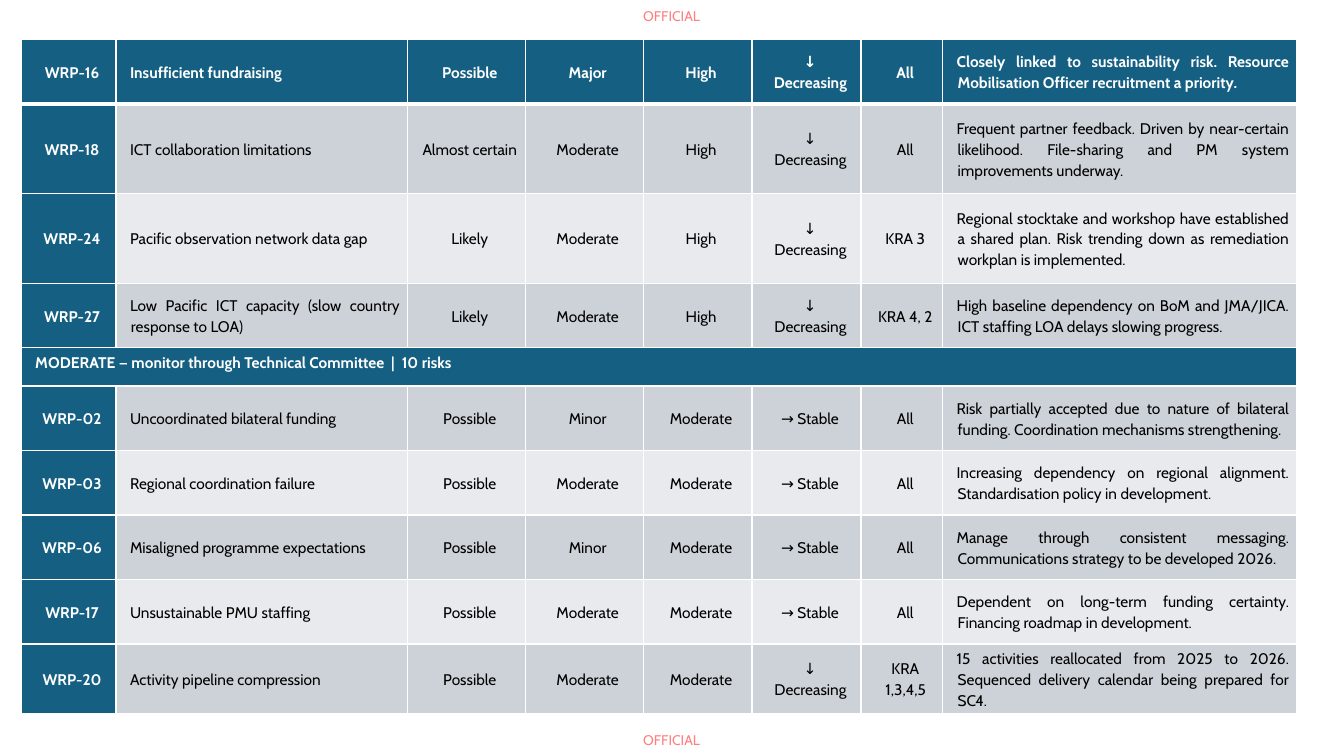
"""Build the risk register table slide."""
from dataclasses import dataclass

from lxml import etree
from pptx import Presentation
from pptx.dml.color import RGBColor
from pptx.enum.text import MSO_ANCHOR, MSO_AUTO_SIZE, PP_ALIGN
from pptx.oxml.ns import qn
from pptx.slide import Slide
from pptx.table import _Cell
from pptx.util import Inches, Pt

CENTER, JUSTIFY = PP_ALIGN.CENTER, PP_ALIGN.JUSTIFY
MIDDLE, TOP = MSO_ANCHOR.MIDDLE, MSO_ANCHOR.TOP
FIT_SHAPE = MSO_AUTO_SIZE.SHAPE_TO_FIT_TEXT


@dataclass(frozen=True)
class Theme:
    """Colours, font and type sizes of the slide."""
    font: str = "Cabin"
    body_size: float = 11
    marking_size: float = 10
    teal: str = "156082"
    dark_band: str = "CCD2D8"
    light_band: str = "E8EAED"
    white: str = "FFFFFF"
    black: str = "000000"
    red: str = "FF0000"


@dataclass(frozen=True)
class Risk:
    """One row of the risk register."""
    code: str
    title: str
    likelihood: str
    impact: str
    rating: str
    trend: str
    area: str
    comment: str
    height: float = 0.64

    def texts(self) -> tuple[str, ...]:
        """Return the cell texts from left to right."""
        return (self.code, self.title, self.likelihood, self.impact,
                self.rating, self.trend, self.area, self.comment)


@dataclass(frozen=True)
class Section:
    """A heading row across the whole table."""
    title: str
    height: float = 0.38

    def texts(self) -> tuple[str, ...]:
        """Return the single heading text."""
        return (self.title,)


THEME = Theme()
DOWN, STABLE = "↓ Decreasing", "→ Stable"
COLUMN_WIDTHS = (0.94, 2.89, 1.17, 1.17, 1.08, 1.08, 0.81, 3.51)
JUSTIFIED_COLUMNS = (1, 7)
MARKING_TOPS = (0.07, 7.26)
ROWS = (
    Risk("WRP-16", "Insufficient fundraising", "Possible", "Major", "High", DOWN, "All",
         "Closely linked to sustainability risk. Resource Mobilisation Officer "
         "recruitment a priority."),
    Risk("WRP-18", "ICT collaboration limitations", "Almost certain", "Moderate", "High",
         DOWN, "All",
         "Frequent partner feedback. Driven by near-certain likelihood. File-sharing "
         "and PM system improvements underway.", 0.89),
    Risk("WRP-24", "Pacific observation network data gap", "Likely", "Moderate", "High",
         DOWN, "KRA 3",
         "Regional stocktake and workshop have established a shared plan. Risk "
         "trending down as remediation workplan is implemented.", 0.89),
    Risk("WRP-27", "Low Pacific ICT capacity (slow country response to LOA)", "Likely",
         "Moderate", "High", DOWN, "KRA 4, 2",
         "High baseline dependency on BoM and JMA/JICA. ICT staffing LOA delays "
         "slowing progress."),
    Section("MODERATE — monitor through Technical Committee  |  10 risks"),
    Risk("WRP-02", "Uncoordinated bilateral funding", "Possible", "Minor", "Moderate",
         STABLE, "All",
         "Risk partially accepted due to nature of bilateral funding. Coordination "
         "mechanisms strengthening."),
    Risk("WRP-03", "Regional coordination failure", "Possible", "Moderate", "Moderate",
         STABLE, "All",
         "Increasing dependency on regional alignment. Standardisation policy in "
         "development."),
    Risk("WRP-06", "Misaligned programme expectations", "Possible", "Minor", "Moderate",
         STABLE, "All",
         "Manage through consistent messaging. Communications strategy to be "
         "developed 2026."),
    Risk("WRP-17", "Unsustainable PMU staffing", "Possible", "Moderate", "Moderate",
         STABLE, "All",
         "Dependent on long-term funding certainty. Financing roadmap in development."),
    Risk("WRP-20", "Activity pipeline compression", "Possible", "Moderate", "Moderate",
         DOWN, "KRA 1,3,4,5",
         "15 activities reallocated from 2025 to 2026. Sequenced delivery calendar "
         "being prepared for SC4."),
)


def add_marking(slide: Slide, top: float) -> None:
    """Add the half-transparent classification marking."""
    sp = slide.shapes.add_textbox(Inches(6.38), Inches(top), Inches(0.6), Inches(0.17))
    tf = sp.text_frame
    tf.margin_left = tf.margin_right = tf.margin_top = tf.margin_bottom = 0
    tf.word_wrap = False
    tf.auto_size = FIT_SHAPE
    p = tf.paragraphs[0]
    p.text = "OFFICIAL"
    p.font.name, p.font.size = THEME.font, Pt(THEME.marking_size)
    p.font.color.rgb = RGBColor.from_string(THEME.red)
    for color in p.font.fill._xPr.iter(qn("a:srgbClr")):
        etree.SubElement(color, qn("a:alpha"), val="50000")


def set_borders(cell: _Cell, row: int) -> None:
    """Draw white cell borders, thicker under the first row."""
    tc_pr = cell._tc.get_or_add_tcPr()
    widths = {"L": 1, "R": 1, "T": 3 if row == 1 else 1, "B": 3 if row == 0 else 1}
    for side, width in widths.items():
        ln = etree.SubElement(tc_pr, qn(f"a:ln{side}"), w=str(Pt(width)))
        fill = etree.SubElement(ln, qn("a:solidFill"))
        etree.SubElement(fill, qn("a:srgbClr"), val=THEME.white)


def style_cell(cell: _Cell, row: int, strong: bool) -> None:
    """Set the borders, margins and fill of a cell."""
    set_borders(cell, row)
    cell.margin_left = cell.margin_right = Inches(0.07)
    cell.margin_top = cell.margin_bottom = Inches(0.04)
    band = THEME.dark_band if row % 2 else THEME.light_band
    cell.fill.solid()
    cell.fill.fore_color.rgb = RGBColor.from_string(THEME.teal if strong else band)


def write_cell(cell: _Cell, text: str, align: PP_ALIGN, strong: bool) -> None:
    """Write one paragraph into a cell."""
    p = cell.text_frame.paragraphs[0]
    p.text = text
    p.alignment = align
    p.line_spacing = 1.11
    p.space_after = Pt(0.2)
    p_pr = p._p.get_or_add_pPr()
    p_pr.set("marL", str(Inches(0.08)))
    p_pr.set("indent", str(Inches(-0.01)))
    p.font.name, p.font.size, p.font.bold = THEME.font, Pt(THEME.body_size), strong
    p.font.color.rgb = RGBColor.from_string(THEME.white if strong else THEME.black)


def add_register(slide: Slide) -> None:
    """Add the risk register table."""
    height = sum(row.height for row in ROWS)
    table = slide.shapes.add_table(
        len(ROWS), len(COLUMN_WIDTHS), Inches(0.21), Inches(0.39),
        Inches(sum(COLUMN_WIDTHS)), Inches(height)).table
    table.first_row = table.horz_banding = False
    for column, width in zip(table.columns, COLUMN_WIDTHS):
        column.width = Inches(width)
    for i, row in enumerate(ROWS):
        table.rows[i].height = Inches(row.height)
        is_section = isinstance(row, Section)
        for j in range(len(COLUMN_WIDTHS)):
            style_cell(table.cell(i, j), i, i == 0 or j == 0 or is_section)
        for j, text in enumerate(row.texts()):
            cell = table.cell(i, j)
            cell.vertical_anchor = TOP if is_section else MIDDLE
            align = JUSTIFY if is_section or j in JUSTIFIED_COLUMNS else CENTER
            write_cell(cell, text, align, i == 0 or j == 0)
        if is_section:
            table.cell(i, 0).merge(table.cell(i, len(COLUMN_WIDTHS) - 1))


def main() -> None:
    """Build and save the slide."""
    prs = Presentation()
    prs.slide_width, prs.slide_height = Inches(13.33), Inches(7.5)
    slide = prs.slides.add_slide(prs.slide_layouts[6])
    for top in MARKING_TOPS:
        add_marking(slide, top)
    add_register(slide)
    prs.save("out.pptx")


if __name__ == "__main__":
    main()
